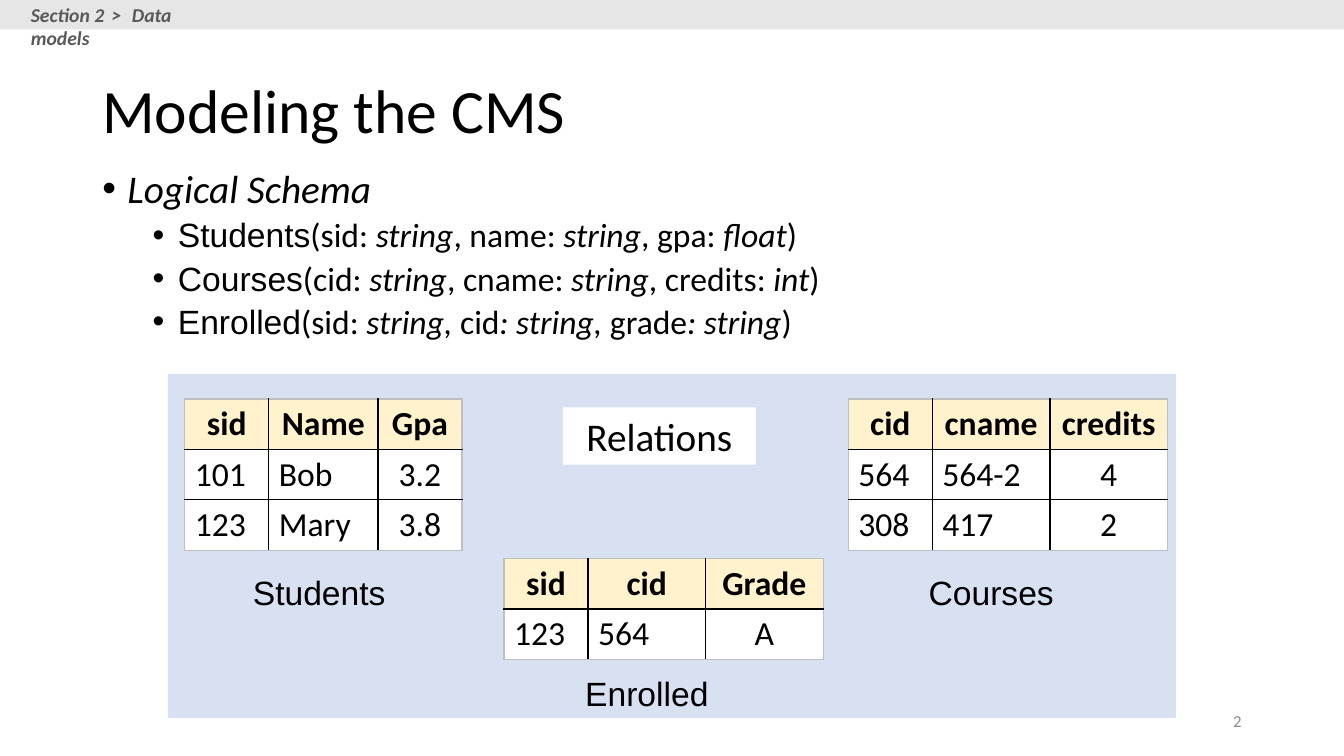
from lxml import etree
from pptx import Presentation
from pptx.dml.color import RGBColor
from pptx.enum.shapes import MSO_SHAPE
from pptx.enum.text import MSO_ANCHOR, PP_ALIGN
from pptx.oxml.ns import qn
from pptx.util import Pt

RECTANGLE = MSO_SHAPE.RECTANGLE
TOP, MIDDLE = MSO_ANCHOR.TOP, MSO_ANCHOR.MIDDLE
LEFT, CENTER, RIGHT = PP_ALIGN.LEFT, PP_ALIGN.CENTER, PP_ALIGN.RIGHT

BLACK = RGBColor(0x00, 0x00, 0x00)
WHITE = RGBColor(0xFF, 0xFF, 0xFF)
BLUE = RGBColor(0x44, 0x72, 0xC4)
CREAM = RGBColor(0xFF, 0xF2, 0xCC)
BAR_GRAY = RGBColor(0xE7, 0xE6, 0xE6)
SECTION_GRAY = RGBColor(0x59, 0x59, 0x59)
NUMBER_GRAY = RGBColor(0x8C, 0x8C, 0x8C)
EDGE_GRAY = RGBColor(0xBF, 0xBF, 0xBF)

ROW_HEIGHT = 36
SCHEMAS = [
    ("Students", [("(sid: ", False), ("string", True), (", name: ", False),
                  ("string", True), (", gpa: ", False), ("float", True), (")", False)]),
    ("Courses", [("(cid: ", False), ("string", True), (", cname: ", False),
                 ("string", True), (", credits: ", False), ("int", True), (")", False)]),
    ("Enrolled", [("(sid: ", False), ("string, ", True), ("cid", False),
                  (": string, ", True), ("grade", False), (": string", True), (")", False)]),
]
RELATIONS = [
    ("Students", 12, 18, (60, 78, 60), (30, 120),
     [("sid", "Name", "Gpa"), ("101", "Bob", "3.2"), ("123", "Mary", "3.8")]),
    ("Courses", 486, 18, (60, 84, 84), (36, 120),
     [("cid", "cname", "credits"), ("564", "564-2", "4"), ("308", "417", "2")]),
    ("Enrolled", 240, 132, (60, 84, 84), (36, 78),
     [("sid", "cid", "Grade"), ("123", "564", "A")]),
]


def add_run(paragraph, text, size, name="Calibri", color=BLACK, bold=False, italic=False):
    run = paragraph.add_run()
    run.text = text
    font = run.font
    font.size, font.name, font.bold, font.italic = Pt(size), name, bold, italic
    font.color.rgb = color
    return run


def add_text_box(slide, left, top, width, height, alignment=LEFT, anchor=TOP):
    box = slide.shapes.add_textbox(Pt(left), Pt(top), Pt(width), Pt(height))
    box.text_frame.word_wrap = True
    box.text_frame.vertical_anchor = anchor
    paragraph = box.text_frame.paragraphs[0]
    paragraph.alignment = alignment
    return paragraph


def add_rectangle(slide, left, top, width, height, color):
    shape = slide.shapes.add_shape(RECTANGLE, Pt(left), Pt(top), Pt(width), Pt(height))
    shape.shadow.inherit = False
    shape.fill.solid()
    shape.fill.fore_color.rgb = color
    shape.line.fill.background()
    return shape


def add_section_bar(slide, left, top, width, height):
    add_rectangle(slide, left, top, width, height, BAR_GRAY)
    paragraph = add_text_box(slide, left + 15, top - 1.5, 152, 24.5)
    for text, spacing in (("Section 2", 0), (" > ", 210), ("Data models", 0)):
        run = add_run(paragraph, text, 14, color=SECTION_GRAY, bold=True, italic=True)
        run.font._element.set("spc", str(spacing))


def add_title(slide, left, top, width, height):
    paragraph = add_text_box(slide, left, top, width, height, anchor=MIDDLE)
    paragraph.line_spacing = 0.9
    add_run(paragraph, "Modeling the CMS", 44)


def format_bullet(paragraph, margin):
    properties = paragraph._p.get_or_add_pPr()
    properties.set("marL", str(Pt(margin)))
    properties.set("indent", str(Pt(-18)))
    etree.SubElement(properties, qn("a:buFont"), typeface="Arial")
    etree.SubElement(properties, qn("a:buChar"), char="•")
    paragraph.line_spacing = 0.9


def add_schema_list(slide, left, top, width, height):
    heading = add_text_box(slide, left, top, width, height)
    format_bullet(heading, 18)
    add_run(heading, "Logical Schema", 28, italic=True)
    text_frame = heading._parent
    for name, parts in SCHEMAS:
        paragraph = text_frame.add_paragraph()
        paragraph.level = 1
        format_bullet(paragraph, 54)
        paragraph.space_before = Pt(5)
        add_run(paragraph, name, 24, "Arial")
        for text, italic in parts:
            add_run(paragraph, text, 24, italic=italic)


def set_borders(cell, outer_sides):
    properties = cell._tc.get_or_add_tcPr()
    for side in "LRTB":
        line = etree.SubElement(properties, qn(f"a:ln{side}"), w=str(Pt(1)))
        fill = etree.SubElement(line, qn("a:solidFill"))
        color = EDGE_GRAY if side in outer_sides else BLACK
        etree.SubElement(fill, qn("a:srgbClr"), val=str(color))


def add_relation(slide, left, top, widths, label_offset, name, rows):
    frame = slide.shapes.add_table(len(rows), len(widths), Pt(left), Pt(top),
                                   Pt(sum(widths)), Pt(ROW_HEIGHT * len(rows)))
    table = frame.table
    table.first_row = table.horz_banding = False
    last_row, last_column = len(rows) - 1, len(widths) - 1
    for column, width in zip(table.columns, widths):
        column.width = Pt(width)
    for row_index, values in enumerate(rows):
        table.rows[row_index].height = Pt(ROW_HEIGHT)
        header = row_index == 0
        for column_index, value in enumerate(values):
            cell = table.cell(row_index, column_index)
            edges = {"L": column_index == 0, "R": column_index == last_column,
                     "T": header, "B": row_index == last_row}
            set_borders(cell, [side for side, outer in edges.items() if outer])
            cell.fill.solid()
            cell.fill.fore_color.rgb = CREAM if header else WHITE
            paragraph = cell.text_frame.paragraphs[0]
            paragraph.alignment = CENTER if header or column_index == last_column else LEFT
            add_run(paragraph, value, 24, bold=header)
    label_left, label_top = label_offset
    label = add_text_box(slide, left + label_left, top + label_top, 132, 36, CENTER)
    add_run(label, name, 24, "Arial")


def add_relations_panel(slide, left, top, width, height):
    panel = add_rectangle(slide, left, top, width, height, BLUE)
    color = panel.fill._xPr.find(qn("a:solidFill"))[0]
    etree.SubElement(color, qn("a:alpha"), val="21000")
    for name, x, y, widths, label_offset, rows in RELATIONS:
        add_relation(slide, left + x, top + y, widths, label_offset, name, rows)
    heading = add_rectangle(slide, left + 282, top + 24, 138, 41, WHITE)
    heading.text_frame.vertical_anchor = TOP
    paragraph = heading.text_frame.paragraphs[0]
    paragraph.alignment = CENTER
    add_run(paragraph, "Relations", 28)


def add_slide_number(slide, left, top, width, height):
    paragraph = add_text_box(slide, left, top, width, height, RIGHT, MIDDLE)
    add_run(paragraph, "2", 12, color=NUMBER_GRAY)


def main():
    presentation = Presentation()
    presentation.slide_width, presentation.slide_height = Pt(960), Pt(540)
    slide = presentation.slides.add_slide(presentation.slide_layouts[6])
    add_title(slide, 66, 28.75, 828, 104.4)
    add_schema_list(slide, 66, 117.5, 648, 356)
    add_relations_panel(slide, 120, 267, 720, 246)
    add_slide_number(slide, 678, 500.5, 216, 28.75)
    add_section_bar(slide, 0, 0, 960, 21)
    presentation.save("out.pptx")


if __name__ == "__main__":
    main()
